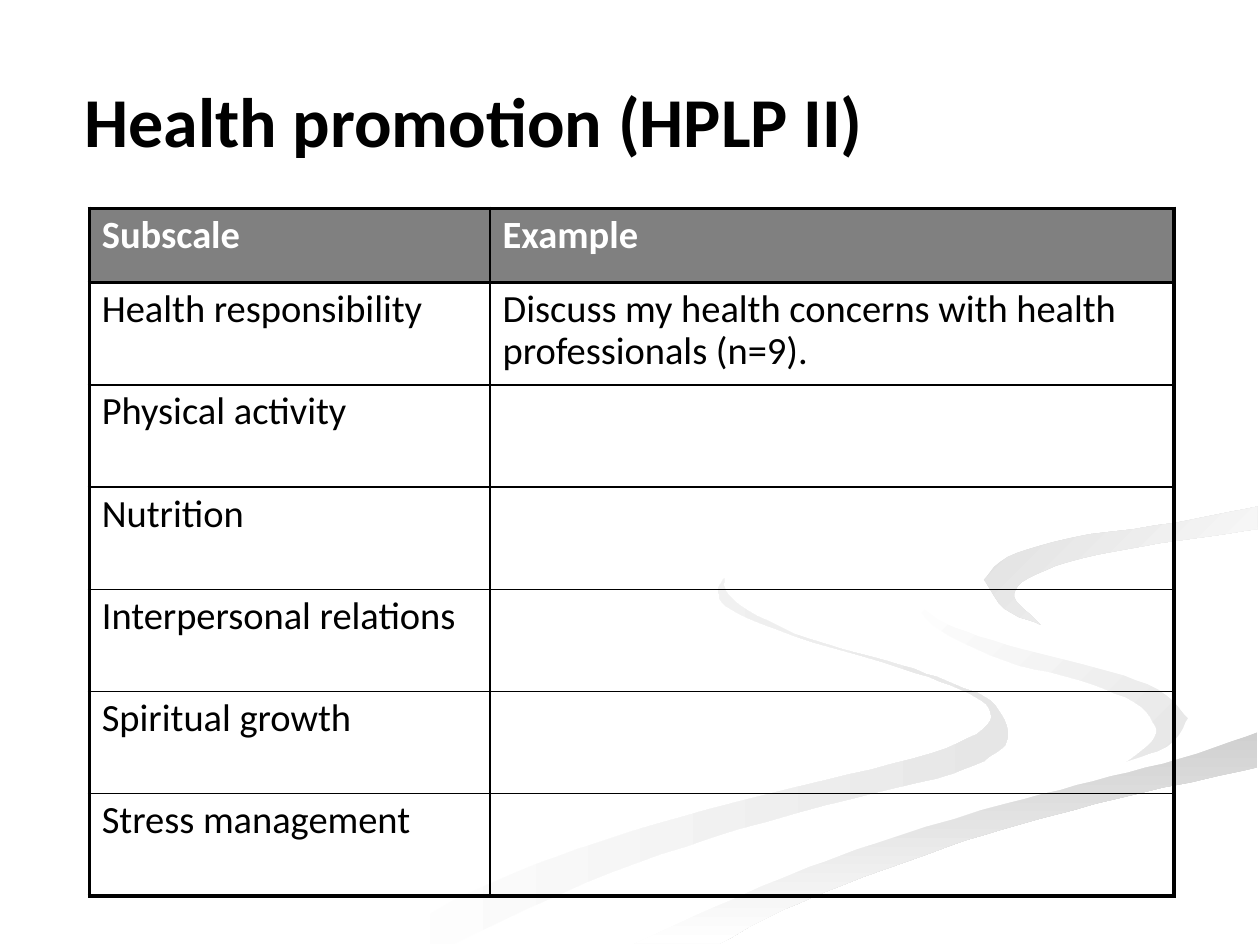
"""Build the health promotion slide: title, subscale table and ribbon background."""
from dataclasses import dataclass

from lxml.etree import SubElement
from pptx import Presentation
from pptx.dml.color import RGBColor as RGB
from pptx.enum.text import MSO_ANCHOR as Anchor, MSO_AUTO_SIZE as AutoSize, PP_ALIGN as Align
from pptx.oxml.ns import qn
from pptx.util import Cm, Pt


@dataclass(frozen=True)
class Theme:
    font: str = "Calibri"
    title: int = 40
    body: int = 22
    black: str = "000000"
    white: str = "FFFFFF"
    header: str = "808080"
    pale: str = "E6E6E6"
    mist: str = "DEDEDE"
    road: str = "D0D0D0"
    thick: float = 2.25
    thin: float = 1


T = Theme()


def put_text(tf, text, size=T.body, color=T.black, bold=False, spacing=None):
    p = tf.paragraphs[0]
    p.alignment, p.line_spacing = Align.LEFT, spacing
    r = p.add_run()
    r.text = text
    r.font.name, r.font.size, r.font.bold = T.font, Pt(size), bold
    r.font.color.rgb = RGB.from_string(color)


def smooth(knots, steps=5):
    """Return points on the Catmull-Rom curve through the knots."""
    padded = [knots[0], *knots, knots[-1]]
    points = [knots[0]]
    for a, b, c, d in zip(padded, padded[1:], padded[2:], padded[3:]):
        for t in (k / steps for k in range(1, steps + 1)):
            points.append(tuple(
                (2 * q + (r - p) * t + (2 * p - 5 * q + 4 * r - s) * t**2
                 + (3 * q - p - 3 * r + s) * t**3) / 2
                for p, q, r, s in zip(a, b, c, d)))
    return points


prs = Presentation()
prs.slide_width, prs.slide_height = Cm(25.4), Cm(19.05)
s = prs.slides.add_slide(prs.slide_layouts[5])

unit = Cm(2.54) / 100
edges = {
    "left outer": [(575, 459), (576, 469), (594, 485), (642, 507), (715, 528), (757, 543),
                   (786, 556), (800, 581), (791, 597), (756, 614), (676, 634), (564, 665),
                   (466, 700), (361, 749)],
    "left inner": [(300, 749), (376, 707), (458, 674), (539, 649), (652, 620), (739, 598),
                   (780, 579), (785, 562), (762, 547), (714, 530), (631, 505), (581, 484),
                   (570, 470), (575, 459)],
    "right outer": [(724, 464), (733, 483), (758, 498), (811, 515), (870, 530), (919, 547),
                    (943, 570)],
    "right tip": [(943, 570), (941, 581), (925, 593), (894, 605)],
    "right inner": [(894, 605), (914, 589), (917, 576), (900, 557), (854, 539), (797, 524),
                    (746, 500), (727, 479), (724, 464)],
    "road top": [(503, 749), (569, 719), (630, 693), (696, 669), (797, 638), (867, 620),
                 (936, 602), (998, 581)],
    "road bottom": [(998, 609), (903, 630), (821, 651), (752, 672), (670, 702), (614, 726),
                    (571, 749)],
    "band lower": [(943, 570), (926, 593), (869, 611), (780, 634), (663, 668), (573, 703),
                   (477, 749)],
    "band middle": [(998, 538), (904, 519), (832, 498), (786, 473), (781, 460)],
    "band upper": [(998, 387), (920, 401), (830, 415), (755, 432), (730, 449), (724, 464)],
    "top outer": [(781, 460), (800, 442), (850, 427), (933, 415), (998, 402)],
    "top inner": [(998, 420), (936, 429), (859, 443), (816, 459), (805, 474), (826, 496)],
    "top tip": [(826, 496), (797, 483), (781, 460)],
}
ribbons = [
    (("left outer", "left inner"), T.white, T.pale, 0),
    (("right outer", "right tip", "right inner"), T.white, T.pale, 315),
    (("road top", "road bottom"), T.road, T.white, 270),
    (("right outer", "band lower", "road top", "band middle", "top outer", "band upper"),
     T.white, T.white, 0),
    (("top outer", "top inner", "top tip"), T.mist, T.white, 315),
]
background = s.shapes.add_group_shape()
for names, start, end, angle in ribbons:
    outline = [point for name in names for point in smooth(edges[name])]
    fb = background.shapes.build_freeform(*outline[0], scale=unit)
    fb.add_line_segments(outline[1:], close=True)
    sp = fb.convert_to_shape()
    sp.shadow.inherit = False
    sp.line.fill.background()
    if start == end:
        sp.fill.solid()
        sp.fill.fore_color.rgb = RGB.from_string(start)
        continue
    sp.fill.gradient()
    sp.fill.gradient_angle = angle
    for position, (stop, color) in enumerate(zip(sp.fill.gradient_stops, (start, end))):
        stop.position, stop.color.rgb = position, RGB.from_string(color)

title = s.shapes.title
title.left, title.top, title.width, title.height = Cm(1.7), Cm(0.71), Cm(18.87), Cm(2.54)
tf = title.text_frame
tf.auto_size, tf.vertical_anchor = AutoSize.NONE, Anchor.BOTTOM
tf.margin_left = tf.margin_top = tf.margin_right = tf.margin_bottom = 0
put_text(tf, "Health promotion (HPLP II)", size=T.title, bold=True)

rows = [
    ("Subscale", "Example"),
    ("Health responsibility", "Discuss my health concerns with health professionals (n=9)."),
    ("Physical activity", ""),
    ("Nutrition", ""),
    ("Interpersonal relations", ""),
    ("Spiritual growth", ""),
    ("Stress management", ""),
]
widths = Cm(8.08), Cm(13.79)
heights = [Cm(1.5)] + [Cm(2.06)] * (len(rows) - 1)
table = s.shapes.add_table(
    len(rows), len(widths), Cm(1.8), Cm(4.2), sum(widths), sum(heights)).table
table.horz_banding = False
for column, width in zip(table.columns, widths):
    column.width = width
for i, (row, texts) in enumerate(zip(table.rows, rows)):
    row.height = heights[i]
    is_header, is_last = i == 0, i == len(rows) - 1
    for j, (cell, text) in enumerate(zip(row.cells, texts)):
        thick_sides = {"L": j == 0, "R": j == 1, "T": i < 2, "B": is_header or is_last}
        for side, is_thick in thick_sides.items():
            width = Pt(T.thick if is_thick else T.thin)
            ln = SubElement(cell._tc.get_or_add_tcPr(), qn(f"a:ln{side}"), w=str(width))
            SubElement(SubElement(ln, qn("a:solidFill")), qn("a:srgbClr"), val=T.black)
        if is_header:
            cell.fill.solid()
            cell.fill.fore_color.rgb = RGB.from_string(T.header)
        else:
            cell.fill.background()
        if text:
            put_text(cell.text_frame, text, color=T.white if is_header else T.black,
                     bold=is_header, spacing=0.9)

prs.save("out.pptx")
